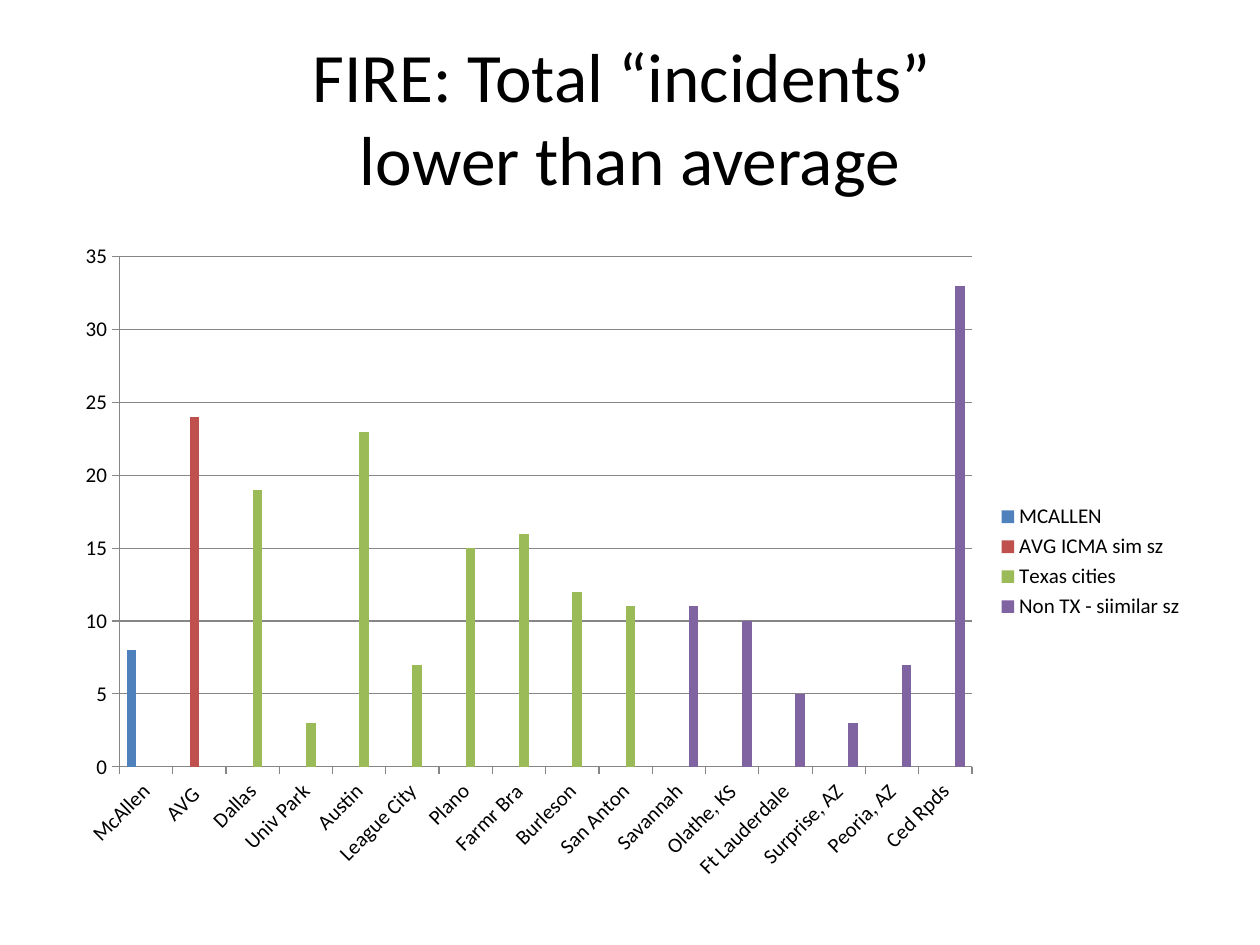
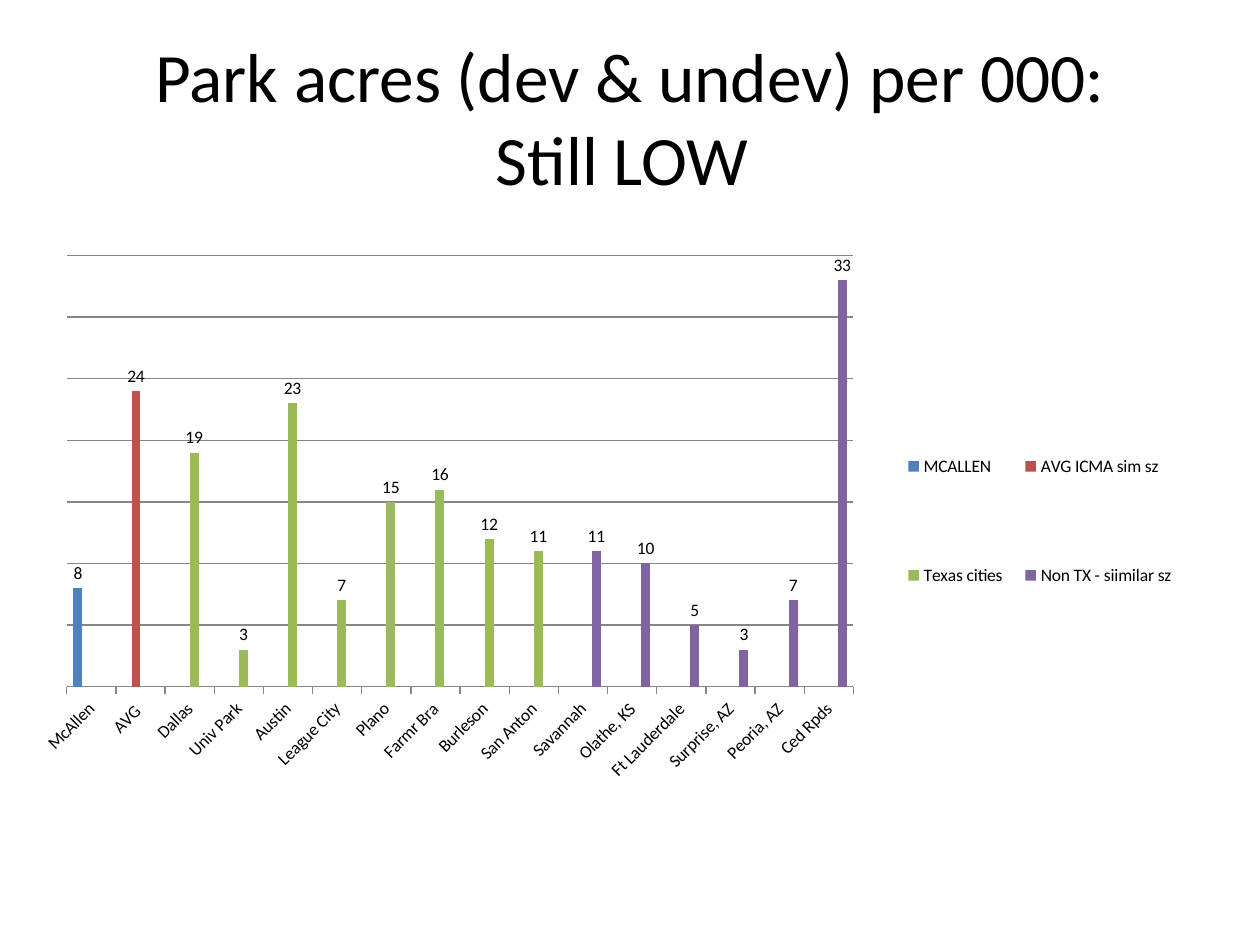
from lxml import etree
from pptx import Presentation
from pptx.chart import data as cd
from pptx.dml.color import RGBColor
from pptx.enum import chart as ch, text as tx
from pptx.oxml import ns
from pptx.util import Pt

BLACK = RGBColor(0, 0, 0)
GREY = RGBColor(0x86, 0x86, 0x86)
BLUE = RGBColor(0x4F, 0x81, 0xBD)
RED = RGBColor(0xC0, 0x50, 0x4D)
GREEN = RGBColor(0x9B, 0xBB, 0x59)
PURPLE = RGBColor(0x80, 0x64, 0xA2)
FONT = "Calibri"

GROUPS = [
    ("MCALLEN", BLUE, [("McAllen", 8)]),
    ("AVG ICMA sim sz", RED, [("AVG ", 24)]),
    ("Texas cities", GREEN, [
        ("Dallas", 19), ("Univ Park", 3), ("Austin", 23), ("League City", 7),
        ("Plano", 15), ("Farmr Bra", 16), ("Burleson", 12), ("San Anton", 11)]),
    ("Non TX - siimilar sz", PURPLE, [
        ("Savannah", 11), ("Olathe, KS", 10), ("Ft Lauderdale", 5),
        ("Surprise, AZ", 3), ("Peoria, AZ", 7), ("Ced Rpds", 33)]),
]


def add_title(slide, words):
    """Add the centred slide title."""
    frame = slide.shapes.add_textbox(Pt(36), Pt(21.6), Pt(648), Pt(90)).text_frame
    frame.word_wrap = True
    frame.vertical_anchor = tx.MSO_ANCHOR.MIDDLE
    line = frame.paragraphs[0]
    line.text = words
    line.alignment = tx.PP_ALIGN.CENTER
    for run in line.runs:
        run.font.name, run.font.size = FONT, Pt(39.6)
        run.font.color.rgb = BLACK


def city_data():
    """Return chart data with each group filled only at its own cities."""
    data = cd.CategoryChartData()
    rows = [(group, city, value) for group, _, cities in GROUPS
            for city, value in cities]
    data.categories = [city for _, city, _ in rows]
    for name, _, _ in GROUPS:
        data.add_series(name, [value if group == name else None
                               for group, _, value in rows])
    return data


def add_chart(slide, box, size):
    """Add the grouped city column chart and return it."""
    chart = slide.shapes.add_chart(ch.XL_CHART_TYPE.COLUMN_CLUSTERED,
                                   *map(Pt, box), city_data()).chart
    chart.has_title = False
    chart.font.name, chart.font.size = FONT, Pt(size)
    chart.font.color.rgb = BLACK
    chart.has_legend = True
    chart.legend.position = ch.XL_LEGEND_POSITION.RIGHT
    chart.legend.include_in_layout = False
    plot = chart.plots[0]
    plot.vary_by_categories = False
    plot.gap_width = 150
    for bars, (_, color, _) in zip(plot.series, GROUPS):
        bars.format.fill.solid()
        bars.format.fill.fore_color.rgb = color
    scale = chart.value_axis
    scale.has_major_gridlines = True
    for part in (scale, scale.major_gridlines, chart.category_axis):
        part.format.line.color.rgb = GREY
        part.format.line.width = Pt(0.75)
    for axis in (scale, chart.category_axis):
        axis.major_tick_mark = ch.XL_TICK_MARK.OUTSIDE
    return chart


def add_labels(plot):
    """Show the value above each column."""
    plot.has_data_labels = True
    plot.data_labels.show_value = True
    plot.data_labels.position = ch.XL_LABEL_POSITION.OUTSIDE_END


def set_place(chart, tag, index, box, inner=False):
    """Fix a chart part at x, y, width, height in percent of the chart."""
    part = chart.element.find(".//" + ns.qn(tag))
    for old in part.findall(ns.qn("c:layout")):
        part.remove(old)
    layout = etree.Element(ns.qn("c:layout"))
    part.insert(index, layout)
    manual = etree.SubElement(layout, ns.qn("c:manualLayout"))
    fields = [("layoutTarget", "inner")] if inner else []
    fields += [("xMode", "edge"), ("yMode", "edge")]
    fields += [(key, share / 100) for key, share in zip("xywh", box)]
    for key, value in fields:
        etree.SubElement(manual, ns.qn("c:" + key)).set("val", str(value))


def main():
    """Build both slides and save them."""
    deck = Presentation()
    deck.slide_width, deck.slide_height = Pt(720), Pt(540)
    blank = deck.slide_layouts[6]

    fire = deck.slides.add_slide(blank)
    add_title(fire, "FIRE: Total “incidents” \vlower than average")
    add_chart(fire, (36, 132, 648, 378), 12)

    parks = deck.slides.add_slide(blank)
    add_title(parks, "Park acres (dev & undev) per 000:\vStill LOW ")
    chart = add_chart(parks, (18, 126, 672, 390.24), 10)
    chart.value_axis.visible = False
    add_labels(chart.plots[0])
    set_place(chart, "c:plotArea", 0, (3, 5.1, 66.9, 63.2), inner=True)
    set_place(chart, "c:legend", 1, (73.1, 21.5, 25.3, 45))

    deck.save("out.pptx")


if __name__ == "__main__":
    main()
